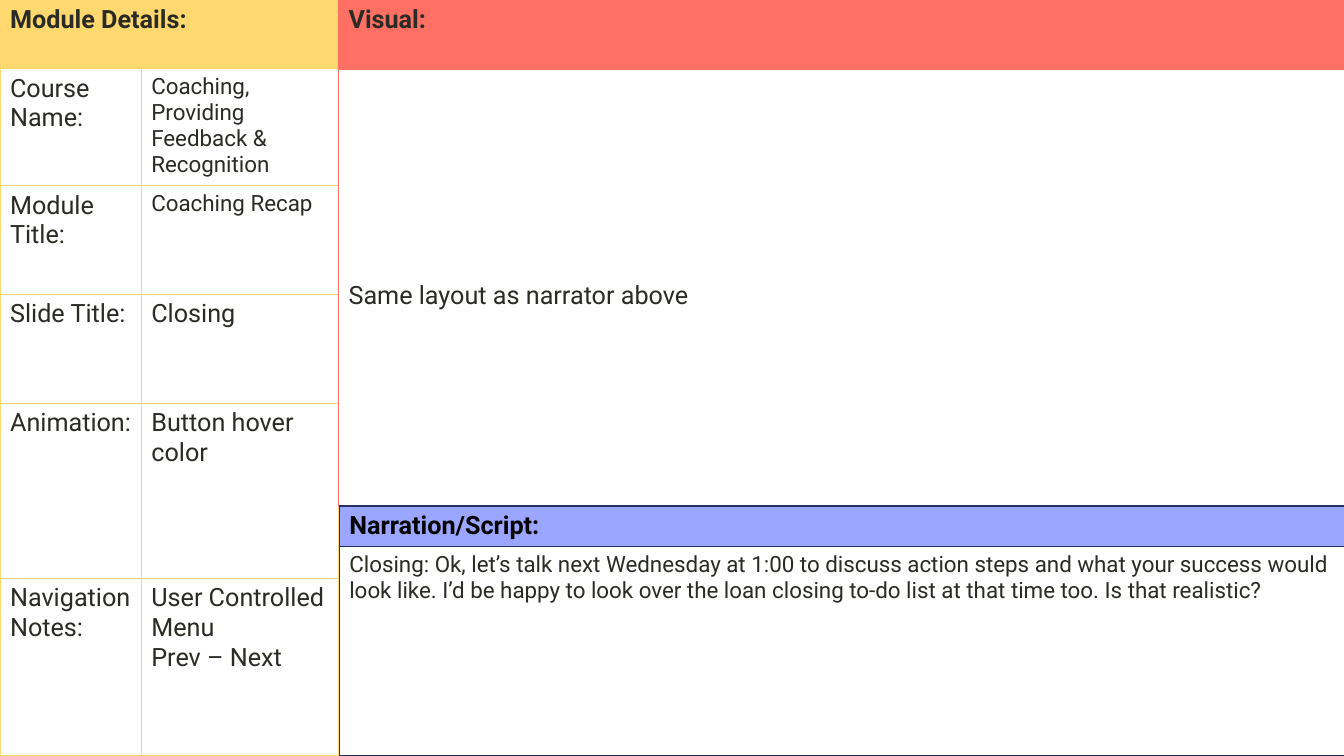
from lxml.etree import SubElement
from pptx import Presentation
from pptx.dml.color import RGBColor
from pptx.oxml.ns import qn
from pptx.util import Cm, Pt

COLORS = {
    "background": "F9F9F9",
    "white": "FFFFFF",
    "ink": "2B2B26",
    "black": "000000",
    "yellow": "FFD96F",
    "coral": "FF7064",
    "periwinkle": "9AA6FF",
    "navy": "233060",
    "grey": "D9D9D9",
}
FONT = "Roboto"
LEFT_WIDTHS = [3.56, 4.98]
RIGHT_LEFT = 8.55
RIGHT_WIDTH = 25.35
SCRIPT_TOP = 12.75

MODULE_DETAILS = [
    ("Course Name:", "Coaching, Providing Feedback & Recognition", 16),
    ("Module Title:", "Coaching Recap", 16),
    ("Slide Title:", "Closing", 18),
    ("Animation:", "Button hover color", 18),
    ("Navigation Notes:", "User Controlled\nMenu\nPrev – Next", 18),
]
SCRIPT = (
    "Closing: Ok, let’s talk next Wednesday at 1:00 to discuss action steps "
    "and what your success would look like. I’d be happy to look over the loan "
    "closing to-do list at that time too. Is that realistic?"
)


def color(name):
    return RGBColor.from_string(COLORS[name])


def set_borders(cell, names):
    """Draw 1 pt edges; names gives the left, right, top and bottom colours."""
    properties = cell._tc.get_or_add_tcPr()
    for position, (edge, name) in enumerate(zip("LRTB", names)):
        line = SubElement(properties, qn(f"a:ln{edge}"), w=str(Pt(1)))
        fill = SubElement(line, qn("a:solidFill"))
        SubElement(fill, qn("a:srgbClr"), val=COLORS[name])
        properties.insert(position, line)


def add_grid(slide, left, top, widths, heights, border, divider=None):
    """Add a plain white table; divider colours the lines between columns."""
    table = slide.shapes.add_table(
        len(heights), len(widths), Cm(left), Cm(top),
        Cm(sum(widths)), Cm(sum(heights)),
    ).table
    table.first_row = table.horz_banding = False
    for column, width in zip(table.columns, widths):
        column.width = Cm(width)
    for row, height in zip(table.rows, heights):
        row.height = Cm(height)
        for index, cell in enumerate(row.cells):
            cell.fill.solid()
            cell.fill.fore_color.rgb = color("white")
            left_edge = divider if index > 0 else border
            right_edge = divider if index < len(widths) - 1 else border
            set_borders(cell, (left_edge, right_edge, border, border))
    return table


def write_cell(cell, text, size=18, bold=False, ink="ink"):
    cell.text_frame.text = text
    formats = {"name": FONT, "size": Pt(size), "bold": bold}
    for para in cell.text_frame.paragraphs:
        for span in para.runs:
            for attribute, value in formats.items():
                setattr(span.font, attribute, value)
            span.font.color.rgb = color(ink)


def write_header(cell, text, fill, ink="ink"):
    cell.fill.fore_color.rgb = color(fill)
    write_cell(cell, text, bold=True, ink=ink)


def add_module_details(slide):
    heights = [1.73, 2.95, 2.74, 2.74, 4.42, 4.47]
    table = add_grid(slide, 0, 0, LEFT_WIDTHS, heights, "yellow", "grey")
    header = table.cell(0, 0)
    header.merge(table.cell(0, 1))
    write_header(header, "Module Details:", "yellow")
    for row, (label, value, size) in enumerate(MODULE_DETAILS, start=1):
        write_cell(table.cell(row, 0), label)
        write_cell(table.cell(row, 1), value, size)


def add_visual(slide):
    table = add_grid(slide, RIGHT_LEFT - 0.02, 0, [RIGHT_WIDTH], [1.75, 11], "coral")
    write_header(table.cell(0, 0), "Visual:", "coral")
    description = table.cell(1, 0)
    description.margin_top = Cm(5.33)
    write_cell(description, "Same layout as narrator above")


def add_narration(slide):
    header_height = 1.02
    header = add_grid(
        slide, RIGHT_LEFT, SCRIPT_TOP, [RIGHT_WIDTH], [header_height], "navy")
    write_header(header.cell(0, 0), "Narration/Script:", "periwinkle", "black")
    script = add_grid(
        slide, RIGHT_LEFT, SCRIPT_TOP + header_height, [RIGHT_WIDTH], [5.28], "navy")
    write_cell(script.cell(0, 0), SCRIPT, 16)


def main():
    deck = Presentation()
    deck.slide_width, deck.slide_height = Cm(33.87), Cm(19.05)
    slide = deck.slides.add_slide(deck.slide_layouts[6])
    slide.background.fill.solid()
    slide.background.fill.fore_color.rgb = color("background")
    add_module_details(slide)
    add_visual(slide)
    add_narration(slide)
    deck.save("out.pptx")


if __name__ == "__main__":
    main()
